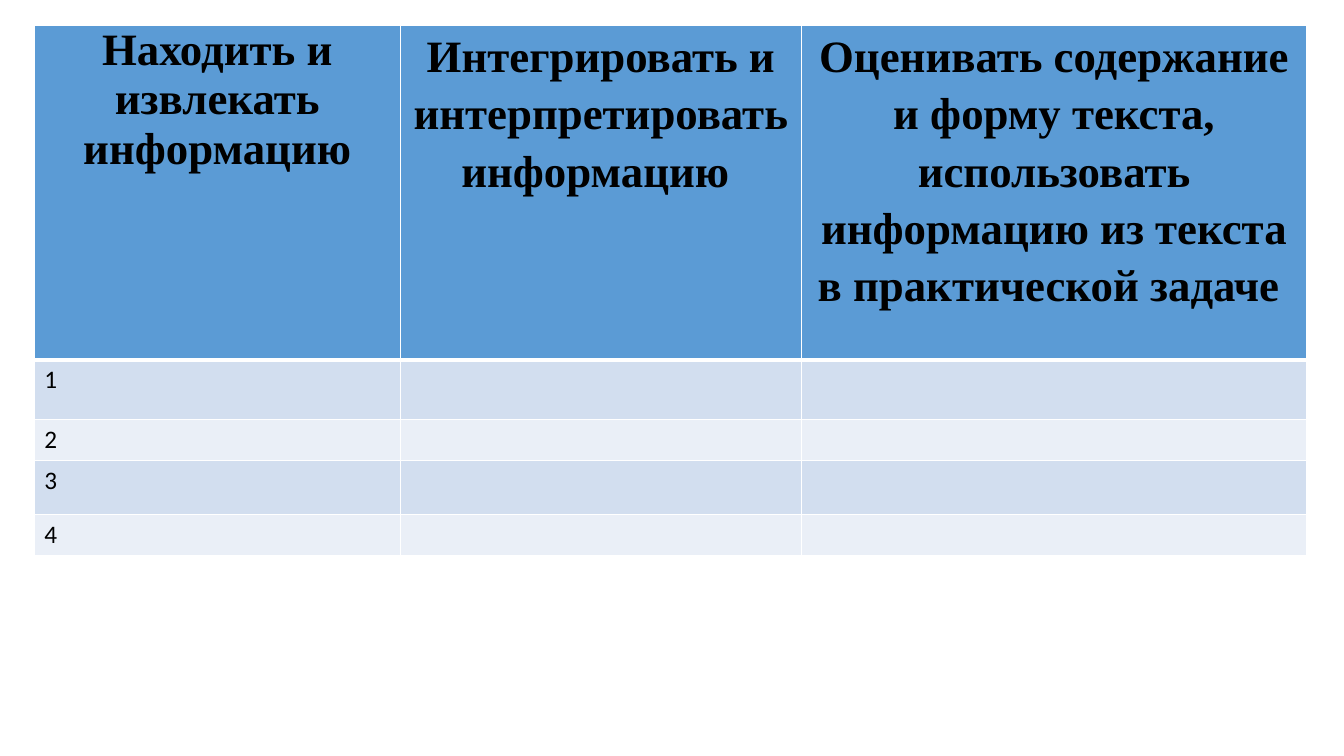
from lxml import etree
from pptx import Presentation
from pptx.dml.color import RGBColor
from pptx.enum.text import PP_ALIGN
from pptx.oxml.ns import qn
from pptx.util import Inches, Pt

CENTER, LEFT = PP_ALIGN.CENTER, PP_ALIGN.LEFT
COLORS = {
    "header": "5B9BD5",
    "odd_row": "D2DEEF",
    "even_row": "EAEFF7",
    "border": "FFFFFF",
    "text": "000000",
}
HEADINGS = [
    ("Находить и извлекать информацию", 1.0),
    ("Интегрировать и интерпретировать информацию ", 1.15),
    ("Оценивать содержание и форму текста, использовать "
     "информацию из текста в практической задаче ", 1.15),
]
COLUMN_WIDTHS = [3.63, 3.98, 5.01]
ROW_HEIGHTS = [3.32, 0.59, 0.4, 0.54, 0.4]


def add_border(cell, side, width):
    """Draw one side of a cell in the border colour."""
    line = etree.SubElement(cell._tc.get_or_add_tcPr(), qn(f"a:ln{side}"), w=str(Pt(width)))
    fill = etree.SubElement(line, qn("a:solidFill"))
    etree.SubElement(fill, qn("a:srgbClr"), val=COLORS["border"])


def style_cell(cell, color, top=1, bottom=1):
    """Give a cell its borders and its fill."""
    for side, width in (("L", 1), ("R", 1), ("T", top), ("B", bottom)):
        add_border(cell, side, width)
    cell.fill.solid()
    cell.fill.fore_color.rgb = RGBColor.from_string(COLORS[color])


def write_cell(cell, text, font, size, bold, align, spacing=1.0):
    """Write one formatted paragraph into a cell."""
    para = cell.text_frame.paragraphs[0]
    para.text = text
    para.alignment = align
    para.line_spacing = spacing
    for span in para.runs:
        span.font.name = font
        span.font.size = Pt(size)
        span.font.bold = bold
        span.font.color.rgb = RGBColor.from_string(COLORS["text"])


def add_skills_table(page):
    """Add the empty table of sizes given by the column and row lists."""
    table = page.shapes.add_table(
        len(ROW_HEIGHTS), len(COLUMN_WIDTHS), Inches(0.34), Inches(0.25),
        Inches(sum(COLUMN_WIDTHS)), Inches(sum(ROW_HEIGHTS))).table
    for column, width in zip(table.columns, COLUMN_WIDTHS):
        column.width = Inches(width)
    for row, height in zip(table.rows, ROW_HEIGHTS):
        row.height = Inches(height)
    return table


def fill_header(table):
    """Fill the heading row."""
    for cell, (text, spacing) in zip(table.rows[0].cells, HEADINGS):
        cell.margin_left = cell.margin_right = Inches(0.07)
        cell.margin_top = cell.margin_bottom = 0
        style_cell(cell, "header", bottom=3)
        write_cell(cell, text, "Times New Roman", 32, True, CENTER, spacing)


def fill_body(table):
    """Fill the numbered rows with alternating colours."""
    for number in range(1, len(ROW_HEIGHTS)):
        color = "odd_row" if number % 2 else "even_row"
        for cell in table.rows[number].cells:
            style_cell(cell, color, top=3 if number == 1 else 1)
        write_cell(table.cell(number, 0), str(number), "Calibri", 18, False, LEFT)


def main():
    """Build the slide and save it."""
    deck = Presentation()
    deck.slide_width, deck.slide_height = Inches(13.33), Inches(7.5)
    page = deck.slides.add_slide(deck.slide_layouts[6])
    table = add_skills_table(page)
    fill_header(table)
    fill_body(table)
    deck.save("out.pptx")


if __name__ == "__main__":
    main()
